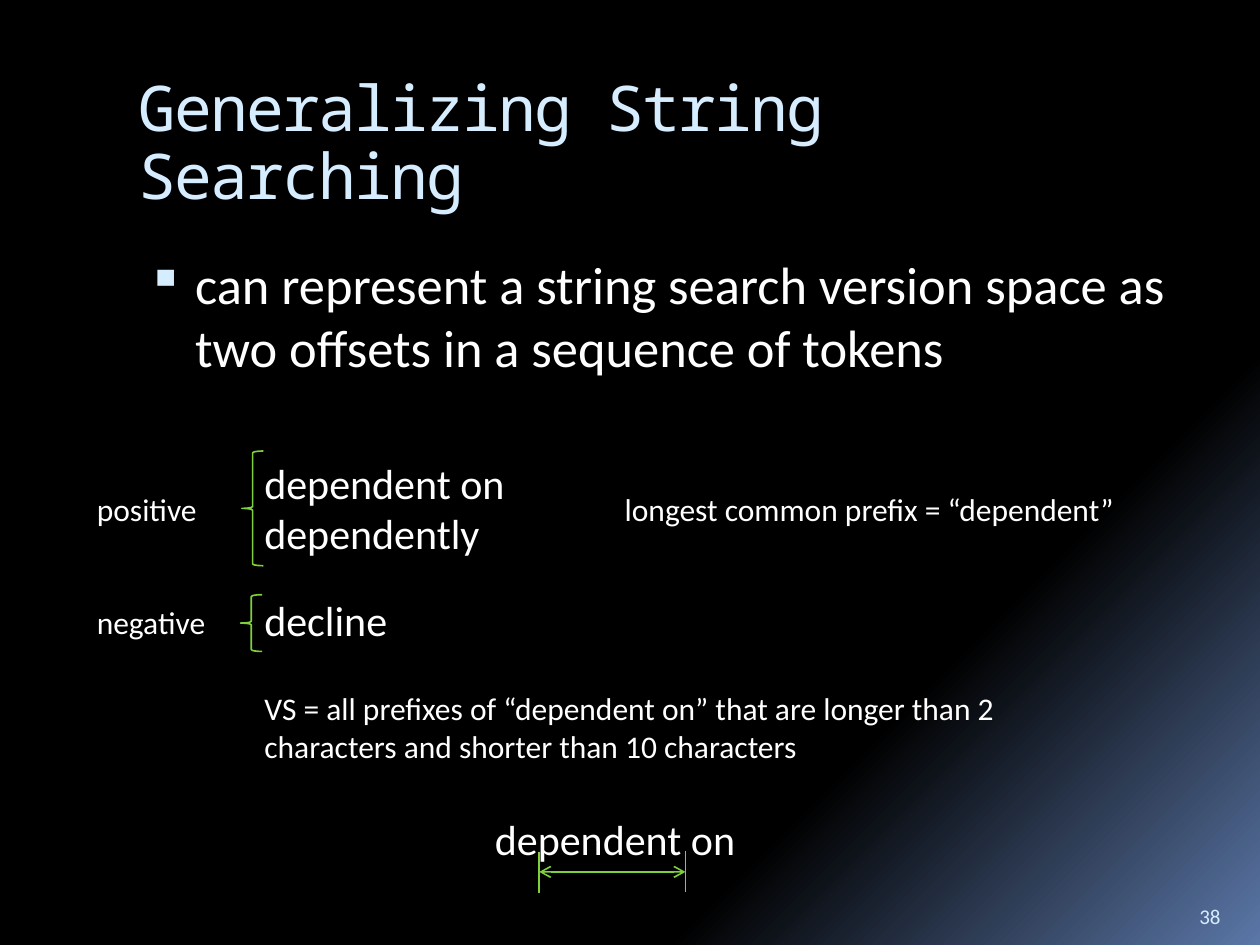
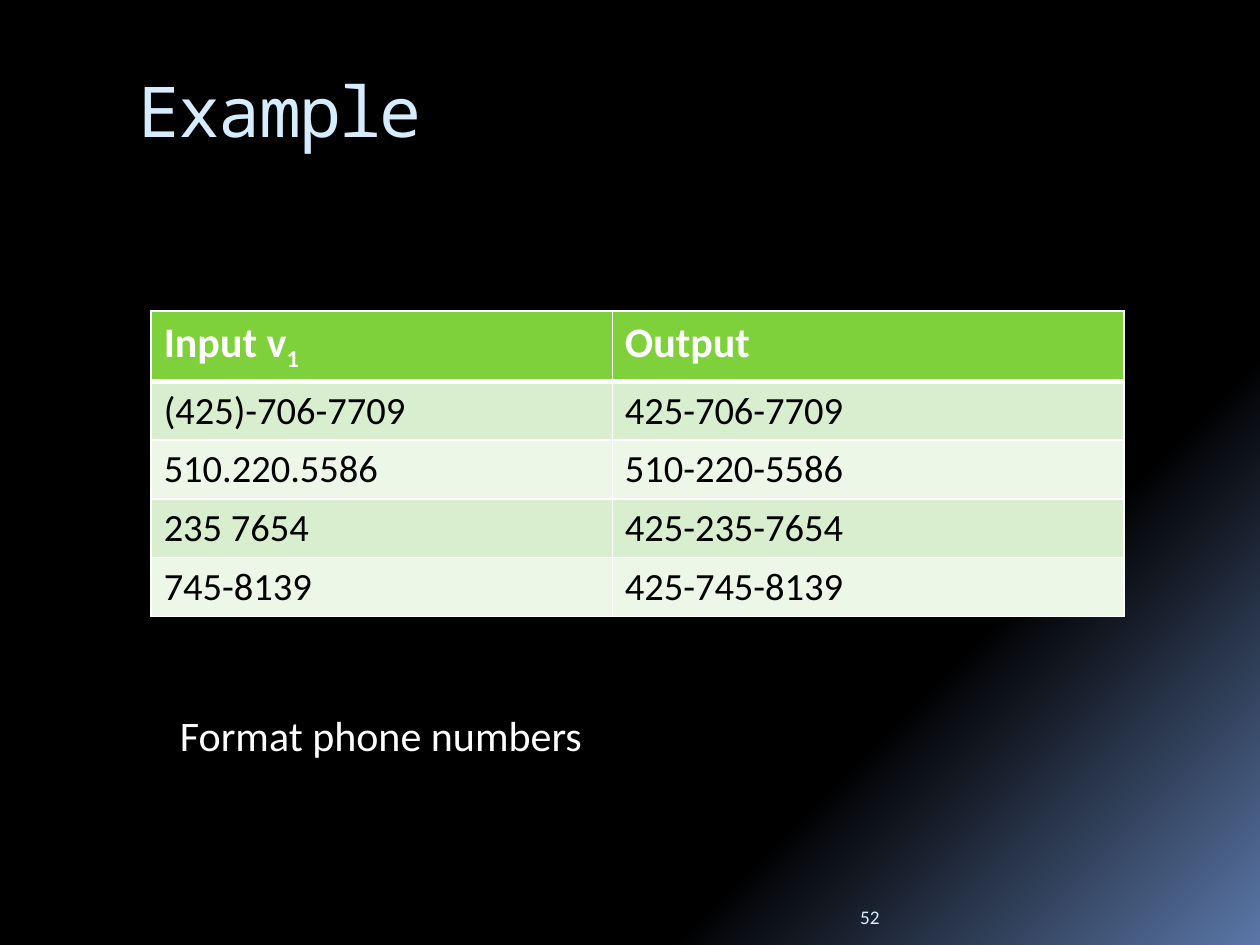
from lxml import etree
from pptx import Presentation
from pptx.dml.color import RGBColor
from pptx.enum.shapes import MSO_CONNECTOR as Link, MSO_SHAPE as Form
from pptx.enum.text import MSO_ANCHOR as Anchor, MSO_AUTO_SIZE as Auto, PP_ALIGN as Align
from pptx.oxml.ns import qn
from pptx.util import Inches, Pt

BLACK = RGBColor(0x00, 0x00, 0x00)
WHITE = RGBColor(0xFF, 0xFF, 0xFF)
ICE = RGBColor(0xD6, 0xEC, 0xFF)
STEEL = RGBColor(0x5B, 0x77, 0xA8)
GREEN = RGBColor(0x7F, 0xD1, 0x3B)
MINT = RGBColor(0xD8, 0xEE, 0xCE)
PALE = RGBColor(0xEC, 0xF7, 0xE8)
GLOW = [(65, BLACK), (73, BLACK), (100, STEEL)]

PHONES = [
    ("(425)-706-7709", "425-706-7709"),
    ("510.220.5586", "510-220-5586"),
    ("235 7654", "425-235-7654"),
    ("745-8139", "425-745-8139"),
]


def node(parent, tag, **attrs):
    return etree.SubElement(parent, qn(tag), {k: str(v) for k, v in attrs.items()})


class Deck:
    sans = "Calibri"
    mono = "Noto Sans Mono"
    thin = Pt(0.94)

    def __init__(self):
        self.prs = Presentation()
        self.prs.slide_width, self.prs.slide_height = Inches(10), Inches(7.5)
        self.slide = None
        self.glow()

    def glow(self):
        """Give the master the diagonal gradient that all slides inherit."""
        fill = self.prs.slide_master.background.fill
        fill.gradient()
        fill.gradient_angle = 315
        stops = self.prs.slide_master.element.find(".//" + qn("a:gsLst"))
        for stop in list(stops):
            stops.remove(stop)
        for spot, color in GLOW:
            stop = node(stops, "a:gs", pos=spot * 1000)
            node(stop, "a:srgbClr", val=color)

    def start(self, title, size):
        self.slide = self.prs.slides.add_slide(self.prs.slide_layouts[6])
        box = self.text(1, 0.56, 8.5, 1, [title], size, ICE, self.mono)
        para = box.text_frame.paragraphs[0]
        para.line_spacing = 0.9
        para.runs[0].font._element.set("spc", "-100")

    def run(self, para, text, size, color=WHITE, font=None, bold=False):
        run = para.add_run()
        run.text = text
        face = run.font
        face.name, face.size, face.bold = font or self.sans, Pt(size), bold
        face.color.rgb = color
        return run

    def text(self, x, y, w, h, lines, size, color=WHITE, font=None, wrap=True):
        box = self.slide.shapes.add_textbox(Inches(x), Inches(y), Inches(w), Inches(h))
        frame = box.text_frame
        frame.word_wrap = wrap
        for i, line in enumerate(lines):
            para = frame.add_paragraph() if i else frame.paragraphs[0]
            self.run(para, line, size, color, font)
        return box

    def label(self, x, y, w, h, *lines, size=18, wrap=False):
        box = self.text(x, y, w, h, lines, size, wrap=wrap)
        box.text_frame.auto_size = Auto.SHAPE_TO_FIT_TEXT

    def bullet(self, x, y, w, h, line):
        para = self.text(x, y, w, h, [line], 30).text_frame.paragraphs[0]
        para.space_before = Pt(7)
        props = para._p.get_or_add_pPr()
        props.set("marL", str(Inches(0.45)))
        props.set("indent", str(Inches(-0.38)))
        node(node(props, "a:buClr"), "a:srgbClr", val=ICE)
        node(props, "a:buSzPct", val=95000)
        node(props, "a:buChar", char="▪")

    def number(self, x, w, text, size, align=Align.LEFT):
        frame = self.text(x, 7.02, w, 0.4, [text], size, ICE).text_frame
        frame.vertical_anchor = Anchor.BOTTOM
        frame.paragraphs[0].alignment = align

    def brace(self, x, y, w, h):
        brace = self.slide.shapes.add_shape(
            Form.LEFT_BRACE, Inches(x), Inches(y), Inches(w), Inches(h))
        brace.shadow.inherit = False
        brace.fill.background()
        brace.line.color.rgb, brace.line.width = GREEN, self.thin

    def line(self, x1, y1, x2, y2, arrows=False):
        line = self.slide.shapes.add_connector(
            Link.STRAIGHT, Inches(x1), Inches(y1), Inches(x2), Inches(y2))
        line.line.color.rgb, line.line.width = GREEN, self.thin
        if arrows:
            for end in ("a:headEnd", "a:tailEnd"):
                node(line.line._get_or_add_ln(), end, type="arrow")
        node(line._element.spPr, "a:effectLst")

    def edges(self, cell, **widths):
        """Draw white borders; widths are points by side letter, in L R T B order."""
        props = cell._tc.get_or_add_tcPr()
        for i, (side, width) in enumerate(widths.items()):
            edge = etree.Element(qn("a:ln" + side), w=str(Pt(width)))
            node(node(edge, "a:solidFill"), "a:srgbClr", val=WHITE)
            props.insert(i, edge)

    def cell(self, cell, text, size, color, fill, bold=False, top=1, base=1):
        cell.fill.solid()
        cell.fill.fore_color.rgb = fill
        self.edges(cell, L=1, R=1, T=top, B=base)
        para = cell.text_frame.paragraphs[0]
        self.run(para, text, size, color, bold=bold)
        return para

    def table(self, x, y, cols, high, heads, rows):
        count = len(rows) + 1
        grid = self.slide.shapes.add_table(
            count, len(cols), Inches(x), Inches(y),
            Inches(sum(cols)), Inches(high * count)).table
        for col, wide in zip(grid.columns, cols):
            col.width = Inches(wide)
        for c, (head, sub) in enumerate(heads):
            para = self.cell(grid.cell(0, c), head, 24, WHITE, GREEN, True, base=3)
            if sub:
                low = self.run(para, sub, 24, bold=True)
                low.font._element.set("baseline", "-25000")
        for r, row in enumerate(rows, 1):
            for c, text in enumerate(row):
                self.cell(grid.cell(r, c), text, 22, BLACK,
                          MINT if r % 2 else PALE, top=3 if r == 1 else 1)


def search(deck):
    deck.start("Generalizing String Searching", 36)
    deck.bullet(1, 1.95, 8.5, 1.38, "can represent a string search version space "
                "as two offsets in a sequence of tokens")
    deck.number(9.42, 0.5, "38", 12)
    deck.label(2, 3.58, 2.14, 0.91, "dependent on", "dependently", size=24)
    deck.label(2, 4.67, 1.2, 0.5, "decline", size=24)
    deck.brace(1.92, 3.58, 0.17, 0.91)
    deck.brace(1.91, 4.72, 0.17, 0.45)
    deck.label(0.67, 3.84, 1.02, 0.4, "positive")
    deck.label(0.67, 4.74, 1.11, 0.4, "negative")
    deck.label(2, 5.42, 6.42, 0.71, "VS = all prefixes of “dependent on” that are "
               "longer than 2 characters and shorter than 10 characters", wrap=True)
    deck.label(3.83, 6.41, 2.14, 0.5, "dependent on", size=24)
    left, right = 4.28, 5.44
    deck.line(left, 6.76, left, 7.09)
    deck.line(right, 6.75, right, 7.08)
    deck.line(left, 6.92, right, 6.92, arrows=True)
    deck.label(4.86, 3.84, 4.17, 0.4, "longest common prefix = “dependent”")


def phones(deck):
    deck.start("Example", 40)
    deck.number(1, 6.08, "52", 11, Align.RIGHT)
    deck.label(1.33, 5.58, 7.41, 0.5, "Format phone numbers", size=24, wrap=True)
    deck.table(1.2, 2.47, (3.66, 4.06), 0.41,
               [("Input v", "1"), ("Output", "")], PHONES)


def main():
    deck = Deck()
    search(deck)
    phones(deck)
    deck.prs.save("out.pptx")


if __name__ == "__main__":
    main()
